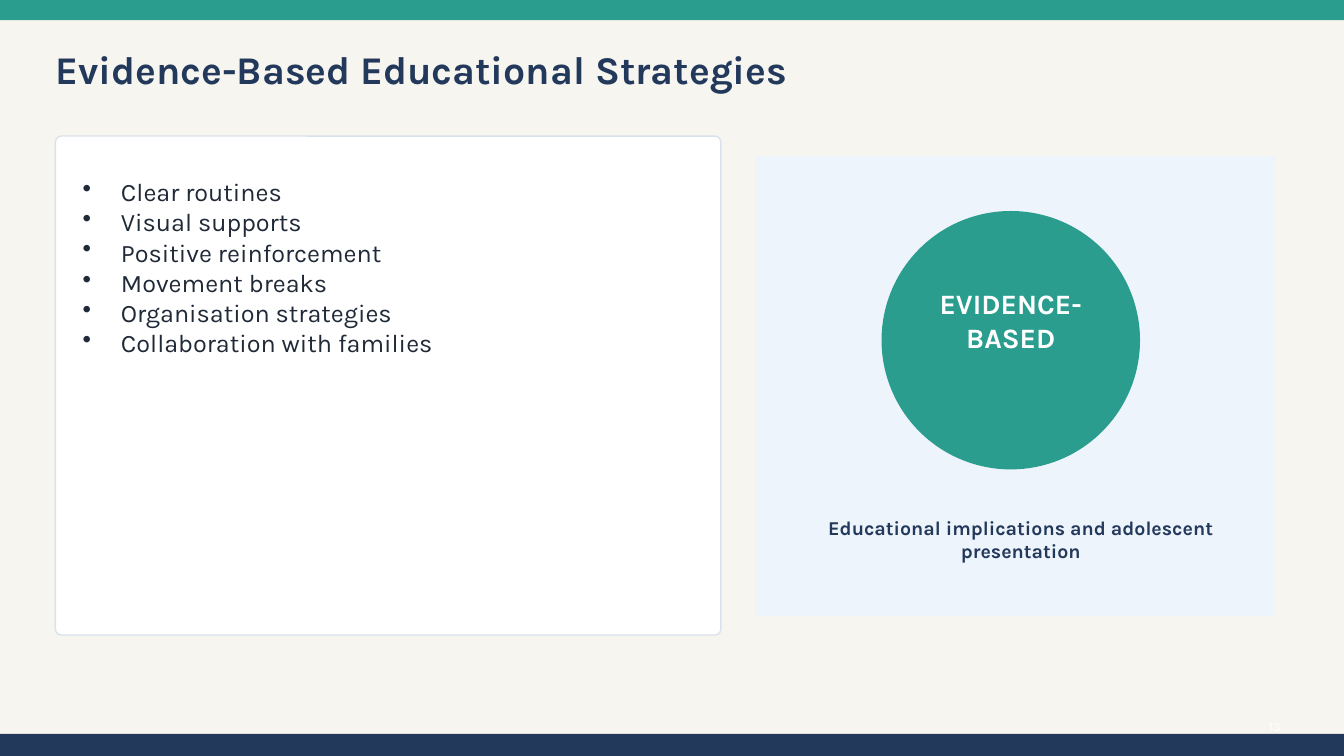
from dataclasses import dataclass

from lxml import etree
from pptx import Presentation
from pptx.dml.color import RGBColor
from pptx.enum.shapes import MSO_SHAPE
from pptx.enum.text import MSO_ANCHOR, PP_ALIGN
from pptx.oxml.ns import qn
from pptx.util import Inches, Pt

RECT = MSO_SHAPE.RECTANGLE
ROUND = MSO_SHAPE.ROUNDED_RECTANGLE
OVAL = MSO_SHAPE.OVAL
TOP, MIDDLE = MSO_ANCHOR.TOP, MSO_ANCHOR.MIDDLE
LEFT, CENTER, RIGHT = PP_ALIGN.LEFT, PP_ALIGN.CENTER, PP_ALIGN.RIGHT


@dataclass(frozen=True)
class Theme:
    font: str = "Karla"
    paper: str = "F7F5F0"
    teal: str = "2A9D8F"
    navy: str = "23395B"
    white: str = "FFFFFF"
    edge: str = "D9E2EC"
    ink: str = "1F2937"
    pale: str = "EEF4FB"
    title: int = 28
    badge: int = 20
    body: int = 18
    note: int = 14
    page: int = 9


THEME = Theme()
WIDTH, HEIGHT = 13.33, 7.5
POINTS = [
    "Clear routines",
    "Visual supports",
    "Positive reinforcement",
    "Movement breaks",
    "Organisation strategies",
    "Collaboration with families",
]


def add_form(slide, kind, box, fill, line=None):
    form = slide.shapes.add_shape(kind, *map(Inches, box))
    form.shadow.inherit = False
    form.fill.solid()
    form.fill.fore_color.rgb = RGBColor.from_string(fill)
    if line:
        form.line.color.rgb = RGBColor.from_string(line)
        form.line.width = Pt(1)
    else:
        form.line.fill.background()
    return form


def add_bullet(para, indent):
    props = para._p.get_or_add_pPr()
    props.set("marL", str(Inches(indent)))
    props.set("indent", str(-Inches(indent)))
    etree.SubElement(props, qn("a:buChar"), char="•")


def add_text(slide, box, lines, size, color, bold=False, align=LEFT,
             anchor=MIDDLE, indent=None):
    frame = slide.shapes.add_textbox(*map(Inches, box)).text_frame
    frame.word_wrap = True
    frame.vertical_anchor = anchor
    frame.margin_left = frame.margin_right = 0
    frame.margin_top = frame.margin_bottom = 0
    for index, line in enumerate(lines):
        para = frame.add_paragraph() if index else frame.paragraphs[0]
        para.alignment = align
        if indent:
            add_bullet(para, indent)
        run = para.add_run()
        run.text = line
        run.font.name = THEME.font
        run.font.size = Pt(size)
        run.font.bold = bold
        run.font.color.rgb = RGBColor.from_string(color)


def add_frame(slide, box, title, page):
    x, y, w, h = box
    foot = y + h - 0.22
    add_form(slide, RECT, (x, y, w, 0.2), THEME.teal)
    add_form(slide, RECT, (x, foot, w, 0.22), THEME.navy)
    add_text(slide, (x + w - 0.98, foot - 0.16, 0.35, 0.18), [page],
             THEME.page, THEME.white, align=RIGHT)
    add_text(slide, (x + 0.55, y + 0.38, 8.8, 0.6), [title],
             THEME.title, THEME.navy, bold=True)


def add_list(slide, box, points):
    x, y, w, h = box
    card = add_form(slide, ROUND, box, THEME.white, THEME.edge)
    card.adjustments[0] = 0.012
    add_text(slide, (x + 0.27, y + 0.4, w - 0.65, h - 0.7), points,
             THEME.body, THEME.ink, anchor=TOP, indent=0.38)


def add_panel(slide, box, label, note):
    x, y, w, h = box
    add_form(slide, RECT, box, THEME.pale, THEME.pale)
    add_form(slide, OVAL, (x + 1.25, y + 0.55, 2.55, 2.55),
             THEME.teal, THEME.teal)
    add_text(slide, (x + 1.45, y + 1.4, 2.15, 0.45), [label],
             THEME.badge, THEME.white, bold=True, align=CENTER)
    add_text(slide, (x + 0.5, y + h - 1.1, w - 0.9, 0.7), [note],
             THEME.note, THEME.navy, bold=True, align=CENTER)


def main():
    deck = Presentation()
    deck.slide_width = Inches(WIDTH)
    deck.slide_height = Inches(HEIGHT)
    slide = deck.slides.add_slide(deck.slide_layouts[6])
    slide.background.fill.solid()
    slide.background.fill.fore_color.rgb = RGBColor.from_string(THEME.paper)
    add_frame(slide, (0, 0, WIDTH, HEIGHT),
              "Evidence-Based Educational Strategies", "13")
    add_list(slide, (0.55, 1.35, 6.6, 4.95), POINTS)
    add_panel(slide, (7.5, 1.55, 5.15, 4.55), "EVIDENCE-BASED",
              "Educational implications and adolescent presentation")
    deck.save("out.pptx")


if __name__ == "__main__":
    main()
